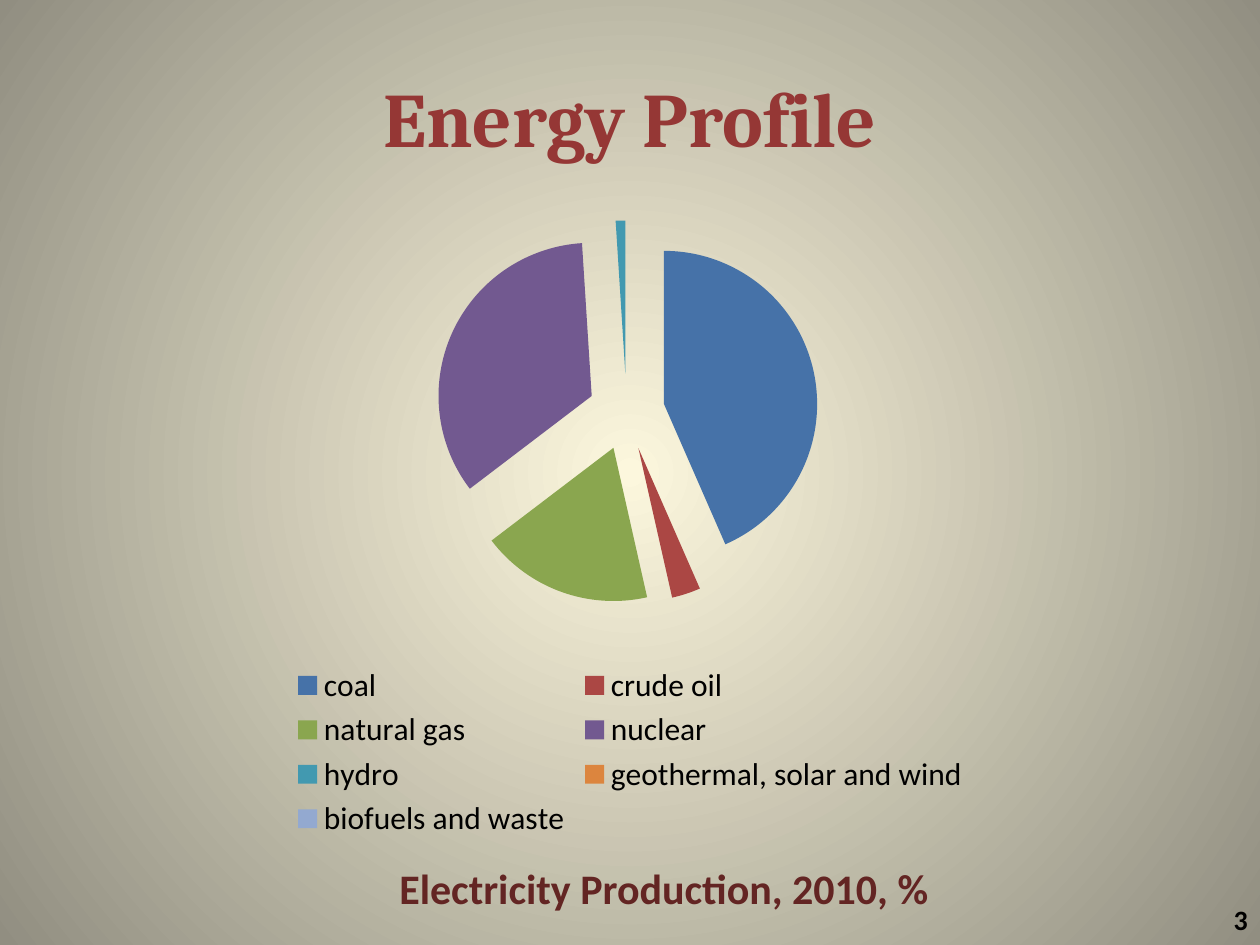
from dataclasses import dataclass

import pptx
import pptx.chart.data
import pptx.dml.color
import pptx.enum.chart
import pptx.enum.text
import pptx.oxml
import pptx.oxml.ns
import pptx.util

Pt = pptx.util.Pt
Align = pptx.enum.text.PP_ALIGN


@dataclass(frozen=True)
class Theme:
    heading_font: str = "Cambria"
    body_font: str = "Calibri"
    title_size: int = 44
    caption_size: int = 24
    legend_size: int = 18
    number_size: int = 16
    title_color: str = "953735"
    caption_color: str = "632523"
    text_color: str = "000000"
    background: tuple = ("FCF7DD", "918E81")
    slices: tuple = ("4672A8", "AB4744", "8AA64F", "725990",
                     "4299B0", "DC853E", "93A9D0")


THEME = Theme()

ENERGY_SHARES = {
    "coal": 43,
    "crude oil": 3,
    "natural gas": 18,
    "nuclear": 34,
    "hydro": 1,
    "geothermal, solar and wind": 0,
    "biofuels and waste": 0,
}


def rgb(value):
    return pptx.dml.color.RGBColor.from_string(value)


def chart_xml(text):
    """Parse a chart element whose prefix is c."""
    namespace = pptx.oxml.ns.nsdecls("c")
    return pptx.oxml.parse_xml(text.replace(" NS", " " + namespace, 1))


def style_font(font, name, size, color, bold=False):
    font.name = name
    font.size = Pt(size)
    font.bold = bold
    font.color.rgb = rgb(color)


def set_background(slide):
    """Radial gradient, light in the centre."""
    fill = slide.background.fill
    fill.gradient()
    for stop, color in zip(fill.gradient_stops, THEME.background):
        stop.color.rgb = rgb(color)
    linear = slide.element.xpath("./p:cSld/p:bg//a:lin")[0]
    circle = pptx.oxml.parse_xml(
        f'<a:path {pptx.oxml.ns.nsdecls("a")} path="circle">'
        '<a:fillToRect l="50000" t="50000" r="50000" b="50000"/></a:path>')
    linear.getparent().replace(linear, circle)


def set_title(slide, text):
    title = slide.shapes.title
    title.left, title.top, title.width, title.height = (
        Pt(36), Pt(21.6), Pt(648), Pt(90))
    frame = title.text_frame
    frame.text = text
    frame.vertical_anchor = pptx.enum.text.MSO_ANCHOR.MIDDLE
    paragraph = frame.paragraphs[0]
    paragraph.alignment = Align.CENTER
    style_font(paragraph.runs[0].font, THEME.heading_font,
               THEME.title_size, THEME.title_color, bold=True)


def add_label(slide, text, box, size, color, alignment, anchor, wrap):
    shape = slide.shapes.add_textbox(*(Pt(length) for length in box))
    frame = shape.text_frame
    frame.word_wrap = wrap
    frame.vertical_anchor = anchor
    frame.text = text
    paragraph = frame.paragraphs[0]
    paragraph.alignment = alignment
    style_font(paragraph.runs[0].font, THEME.body_font, size, color, bold=True)


def add_pie(slide, shares, box):
    data = pptx.chart.data.CategoryChartData()
    data.categories = list(shares)
    data.add_series("Series 1", list(shares.values()))
    chart = slide.shapes.add_chart(
        pptx.enum.chart.XL_CHART_TYPE.PIE,
        *(Pt(length) for length in box), data).chart
    chart.has_title = False
    style_font(chart.font, THEME.body_font, THEME.legend_size, THEME.text_color)

    # Legend under the pie
    chart.has_legend = True
    chart.legend.position = pptx.enum.chart.XL_LEGEND_POSITION.BOTTOM
    chart.legend.include_in_layout = False

    # Exploded slices, one colour each
    plot = chart.plots[0]
    plot.vary_by_categories = True
    series_name = chart.element.xpath(".//c:ser/c:tx")[0]
    series_name.addnext(chart_xml('<c:explosion NS val="25"/>'))
    for index, color in enumerate(THEME.slices):
        fill = plot.series[0].points[index].format.fill
        fill.solid()
        fill.fore_color.rgb = rgb(color)

    # Fixed place of the pie within the chart
    plot_area = chart.element.xpath(".//c:plotArea")[0]
    for layout in plot_area.xpath("./c:layout"):
        plot_area.remove(layout)
    place = {"x": 0.014, "y": 0, "w": 0.966, "h": 0.614}
    modes = '<c:xMode val="edge"/><c:yMode val="edge"/>'
    sizes = "".join(f'<c:{key} val="{value}"/>' for key, value in place.items())
    plot_area.insert(0, chart_xml(
        '<c:layout NS><c:manualLayout><c:layoutTarget val="inner"/>'
        f'{modes}{sizes}</c:manualLayout></c:layout>'))


def main():
    presentation = pptx.Presentation()
    presentation.slide_width = Pt(720)
    presentation.slide_height = Pt(540)
    slide = presentation.slides.add_slide(presentation.slide_layouts[5])
    anchors = pptx.enum.text.MSO_ANCHOR

    set_background(slide)
    set_title(slide, "Energy Profile")
    add_pie(slide, ENERGY_SHARES, (36, 126, 648, 356.4))

    # Slide number and chart caption
    add_label(slide, "3", (552, 511.2, 168, 28.8), THEME.number_size,
              THEME.text_color, Align.RIGHT, anchors.MIDDLE, True)
    add_label(slide, "Electricity Production, 2010, %",
              (219.6, 489.6, 319.7, 36), THEME.caption_size,
              THEME.caption_color, Align.CENTER, anchors.TOP, False)

    presentation.save("out.pptx")


if __name__ == "__main__":
    main()
